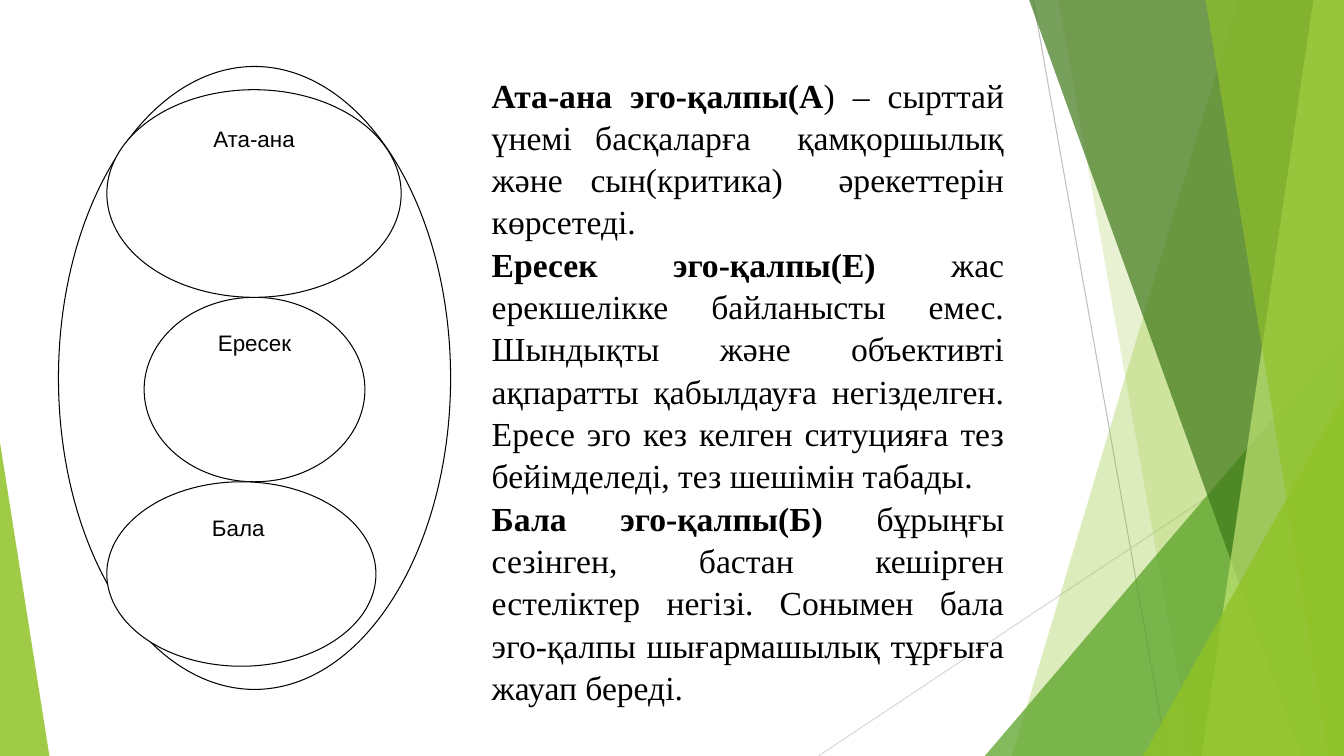
from lxml.etree import SubElement
from pptx import Presentation
from pptx.dml.color import RGBColor
from pptx.enum.shapes import MSO_CONNECTOR, MSO_SHAPE
from pptx.enum.text import MSO_ANCHOR, MSO_AUTO_SIZE, PP_ALIGN
from pptx.oxml.ns import qn
from pptx.util import Inches, Pt

CELL = Inches(0.1)
COLUMNS, ROWS = 133.33, 75

WHITE = RGBColor(0xFF, 0xFF, 0xFF)
BLACK = RGBColor(0x00, 0x00, 0x00)
GREY = RGBColor(0xBF, 0xBF, 0xBF)
LIGHT_GREY = RGBColor(0xD9, 0xD9, 0xD9)
LIME = RGBColor(0x90, 0xC2, 0x26)
GREEN = RGBColor(0x54, 0xA0, 0x21)
DARK_GREEN = RGBColor(0x3F, 0x78, 0x19)
PALE_LIME = RGBColor(0xC0, 0xE4, 0x74)

EGO_STATES = [
    ("Ересек", 14.3, 29.5, 21.9, 18.3),
    ("Ата-ана", 10.6, 8.9, 29.2, 20.6),
    ("Бала ", 10.6, 47.8, 26.7, 18.3),
]
DESCRIPTIONS = [
    ("Ата-ана эго-қалпы(А",
     ") – сырттай үнемі басқаларға  қамқоршылық және сын(критика)  "
     "әрекеттерін көрсетеді. "),
    ("Ересек эго-қалпы(Е) ",
     "жас ерекшелікке байланысты емес. Шындықты және объективті ақпаратты "
     "қабылдауға негізделген. Ересе эго кез келген ситуцияға тез "
     "бейімделеді, тез шешімін табады. "),
    ("Бала эго-қалпы(Б) ",
     "бұрыңғы сезінген, бастан кешірген естеліктер негізі. Сонымен бала "
     "эго-қалпы шығармашылық тұрғыға жауап береді."),
]


def cells(*counts):
    """Turn grid counts into slide lengths."""
    return [round(count * CELL) for count in counts]


def paint(shape, color, opacity):
    """Give a shape a translucent fill without outline or shadow."""
    shape.shadow.inherit = False
    shape.line.fill.background()
    shape.fill.solid()
    shape.fill.fore_color.rgb = color
    color_element = shape.fill._xPr.find(qn("a:solidFill"))[0]
    SubElement(color_element, qn("a:alpha"), val=str(opacity * 1000))


def add_thin_line(slide, start, end, color):
    """Draw a thin decorative line."""
    line = slide.shapes.add_connector(
        MSO_CONNECTOR.STRAIGHT, *cells(*start), *cells(*end))
    line.line.color.rgb = color
    line.line.width = Pt(0.75)
    SubElement(line._element.spPr, qn("a:effectLst"))


def add_band(slide, top_column, bottom_column, color, opacity):
    """Draw a band from a slanted left side to the right slide edge."""
    corners = [(COLUMNS, 0), (COLUMNS, ROWS), (bottom_column, ROWS)]
    builder = slide.shapes.build_freeform(*cells(top_column, 0))
    builder.add_line_segments([cells(*corner) for corner in corners])
    paint(builder.convert_to_shape(), color, opacity)


def add_corner(slide, left, width, height, apex, color, opacity):
    """Draw a triangle standing on the bottom slide edge."""
    triangle = slide.shapes.add_shape(
        MSO_SHAPE.ISOSCELES_TRIANGLE,
        *cells(left, ROWS - height, width, height))
    triangle.adjustments[0] = apex
    paint(triangle, color, opacity)


def add_oval(slide, label, *box):
    """Draw an outlined oval with its label at the top."""
    oval = slide.shapes.add_shape(MSO_SHAPE.OVAL, *cells(*box))
    oval.shadow.inherit = False
    oval.fill.solid()
    oval.fill.fore_color.rgb = WHITE
    oval.line.color.rgb = BLACK
    oval.line.width = Pt(0.75)
    if label:
        oval.text_frame.text = label
        oval.text_frame.vertical_anchor = MSO_ANCHOR.TOP
        paragraph = oval.text_frame.paragraphs[0]
        paragraph.alignment = PP_ALIGN.CENTER
        format_run(paragraph.runs[0], "Arial", 16)


def format_run(run, font_name, size, bold=False):
    """Set the font of a run."""
    run.font.name = font_name
    run.font.size = Pt(size)
    run.font.bold = bold
    run.font.color.rgb = BLACK


def add_descriptions(slide, *box):
    """Write the justified descriptions with bold lead-ins."""
    text_frame = slide.shapes.add_textbox(*cells(*box)).text_frame
    text_frame.word_wrap = True
    text_frame.auto_size = MSO_AUTO_SIZE.SHAPE_TO_FIT_TEXT
    for index, (lead, body) in enumerate(DESCRIPTIONS):
        paragraph = (text_frame.add_paragraph() if index
                     else text_frame.paragraphs[0])
        paragraph.alignment = PP_ALIGN.JUSTIFY
        paragraph.line_spacing = 1.05
        for text, bold in ((lead, True), (body, False)):
            run = paragraph.add_run()
            run.text = text
            format_run(run, "Times New Roman", 24, bold)


def add_decoration(slide):
    """Draw the green facets and thin lines behind the content."""
    add_thin_line(slide, (102.5, 0), (115.8, ROWS), GREY)
    add_thin_line(slide, (COLUMNS, 40.3), (81.2, ROWS), LIGHT_GREY)
    add_band(slide, 122.8, 100.4, LIME, 30)
    add_band(slide, 105, 118.3, LIME, 20)
    add_corner(slide, 97.7, 35.6, 41.7, 1, GREEN, 72)
    add_band(slide, 102.1, 129.1, DARK_GREEN, 70)
    add_band(slide, 130.3, 119.2, PALE_LIME, 70)
    add_band(slide, 119.6, 131.8, LIME, 65)
    add_corner(slide, 113.4, 19.9, 35.7, 1, LIME, 80)
    add_corner(slide, 0, 4.9, 31.1, 0, LIME, 85)


def main():
    """Build the slide and save it."""
    presentation = Presentation()
    presentation.slide_width, presentation.slide_height = cells(COLUMNS, ROWS)
    slide = presentation.slides.add_slide(presentation.slide_layouts[6])
    add_decoration(slide)
    add_oval(slide, "", 5.8, 6.6, 38.9, 61.8)
    for ego_state in EGO_STATES:
        add_oval(slide, *ego_state)
    add_descriptions(slide, 47.8, 6.7, 52.8, 64.6)
    presentation.save("out.pptx")


if __name__ == "__main__":
    main()
